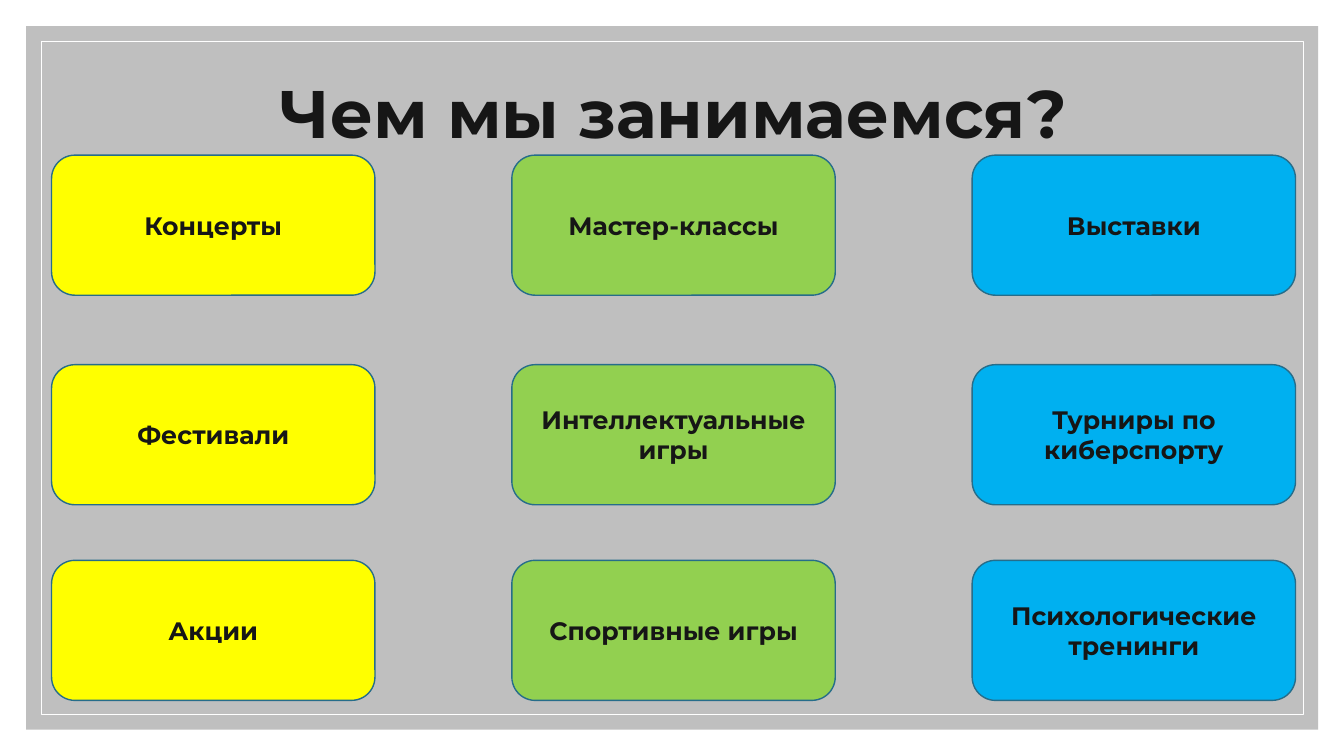
from pptx import Presentation
from pptx.dml.color import RGBColor
from pptx.enum.shapes import MSO_SHAPE
from pptx.enum.text import MSO_ANCHOR, MSO_AUTO_SIZE, PP_ALIGN
from pptx.util import Cm, Pt

TITLE = "Чем мы занимаемся?"
COLUMNS = [
    ("FFFF00", ["Концерты", "Фестивали", "Акции"]),
    ("92D050", ["Мастер-классы", "Интеллектуальные игры", "Спортивные игры"]),
    ("00B0F0", ["Выставки", "Турниры по киберспорту", "Психологические тренинги"]),
]
TOPS = [3.91, 9.19, 14.12]
LEFT, STEP = 1.3, 11.6
CARD = (8.15, 3.53)
FONT, INK = "Montserrat", "161616"


def paint(color, value):
    color.rgb = RGBColor.from_string(value)


def add_box(slide, kind, place, fill=None, line=None, width=1):
    box = slide.shapes.add_shape(kind, *map(Cm, place))
    box.shadow.inherit = False
    if fill:
        box.fill.solid()
        paint(box.fill.fore_color, fill)
    else:
        box.fill.background()
    if line:
        paint(box.line.color, line)
        box.line.width = Pt(width)
    else:
        box.line.fill.background()
    return box


def write(shape, text, size):
    frame = shape.text_frame
    frame.text = text
    frame.word_wrap = True
    frame.auto_size = MSO_AUTO_SIZE.NONE
    frame.vertical_anchor = MSO_ANCHOR.MIDDLE
    para = frame.paragraphs[0]
    para.alignment = PP_ALIGN.CENTER
    font = para.runs[0].font
    font.name, font.size, font.bold = FONT, Pt(size), True
    paint(font.color, INK)


def main():
    deck = Presentation()
    deck.slide_width, deck.slide_height = Cm(33.87), Cm(19.05)
    slide = deck.slides.add_slide(deck.slide_layouts[5])

    add_box(slide, MSO_SHAPE.RECTANGLE, (0.66, 0.66, 32.56, 17.73), fill="BFBFBF")
    add_box(slide, MSO_SHAPE.RECTANGLE, (1.04, 1.04, 31.8, 16.97), line="FFFFFF", width=0.5)

    title = slide.shapes.title
    title.left, title.top, title.width, title.height = map(Cm, (3, 1.04, 27.94, 3.81))
    write(title, TITLE, 48)
    title.text_frame.paragraphs[0].line_spacing = 0.9
    slide.shapes._spTree.append(title._element)

    for col, (fill, names) in enumerate(COLUMNS):
        for top, name in zip(TOPS, names):
            place = (LEFT + col * STEP, top, *CARD)
            card = add_box(slide, MSO_SHAPE.ROUNDED_RECTANGLE, place, fill, "266D8A")
            write(card, name, 18)

    deck.save("out.pptx")


if __name__ == "__main__":
    main()
